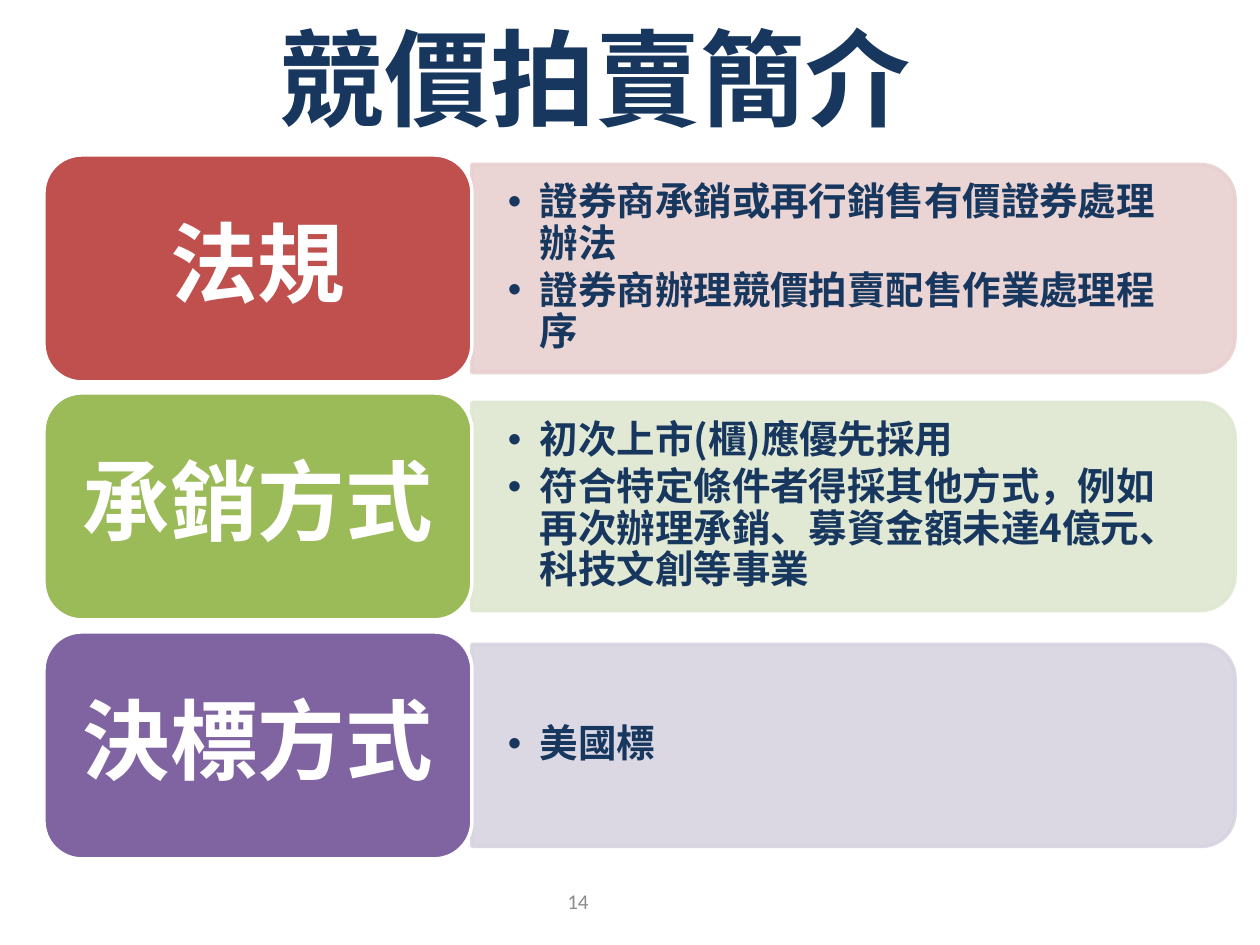
from lxml.etree import SubElement
from pptx import Presentation
from pptx.dml.color import RGBColor
from pptx.enum.shapes import MSO_SHAPE as Shape
from pptx.enum.text import MSO_ANCHOR as Anchor, PP_ALIGN as Align
from pptx.oxml.ns import qn
from pptx.util import Emu, Pt

SCALE = 914400 / 126
FONT = "Noto Sans CJK SC"
COLORS = {
    "navy": "17375E", "white": "FFFFFF", "gray": "8C8C8C",
    "red": "C0504D", "pale_red": "E8D0D0",
    "green": "9BBB59", "pale_green": "DEE7D1",
    "purple": "8064A2", "pale_purple": "D8D3E0",
}
ROWS = [
    ("法規", "red", 208, ["證券商承銷或再行銷售有價證券處理辦法", "證券商辦理競價拍賣配售作業處理程序"]),
    ("承銷方式", "green", 208, ["初次上市(櫃)應優先採用", "符合特定條件者得採其他方式，例如再次辦理承銷、募資金額未達4億元、科技文創等事業"]),
    ("決標方式", "purple", 202, ["美國標"]),
]


def px(length):
    """Turn px into EMU."""
    return Emu(round(length * SCALE))


def box(left, top, width, height):
    """Return a box given in px as EMU lengths."""
    return [px(length) for length in (left, top, width, height)]


def color(name):
    """Look up a named colour."""
    return RGBColor.from_string(COLORS[name])


def format_runs(paragraph, size, color_name, font=FONT, bold=True):
    """Format every run of a paragraph for Latin and East Asian text."""
    for run in paragraph.runs:
        run.font.size = Pt(size)
        run.font.bold = bold
        run.font.color.rgb = color(color_name)
        run.font.name = font
        SubElement(run.font._element, qn("a:ea"), typeface=font)


def set_frame(text_frame, side=0, end=0):
    """Wrap and centre a text frame vertically with the given insets."""
    text_frame.word_wrap = True
    text_frame.vertical_anchor = Anchor.MIDDLE
    text_frame.margin_left = text_frame.margin_right = px(side)
    text_frame.margin_top = text_frame.margin_bottom = px(end)


def paint(shape, fill_name, line_name, alpha=None):
    """Give a shape a flat fill and outline, optionally see-through."""
    shape.shadow.inherit = False
    shape.fill.solid()
    shape.fill.fore_color.rgb = color(fill_name)
    shape.line.color.rgb = color(line_name)
    shape.line.width = Pt(2)
    if alpha:
        for rgb in shape._element.spPr.iter(qn("a:srgbClr")):
            SubElement(rgb, qn("a:alpha"), val=str(alpha * 1000))


def add_bullets(slide, left, top, width, height, items):
    """Place the bulleted text of one row."""
    text_frame = slide.shapes.add_textbox(*box(left, top, width, height)).text_frame
    set_frame(text_frame, 34, 18)
    text_frame.text = "\n".join(items)
    for paragraph in text_frame.paragraphs:
        paragraph.line_spacing = 0.9
        paragraph.space_after = Pt(3)
        properties = paragraph._p.get_or_add_pPr()
        properties.set("marL", str(px(32)))
        properties.set("indent", str(-px(32)))
        SubElement(properties, qn("a:buFont"), typeface="Arial")
        SubElement(properties, qn("a:buChar"), char="•")
        format_runs(paragraph, 22, "navy")


def add_row(slide, left, top, width, height, row):
    """Place one row: a pale panel with bullets and a coloured heading."""
    heading, color_name, panel_height, items = row
    heading_width = 428
    panel_left = left + heading_width
    panel_width = width - heading_width
    middle = top + height / 2
    panel = slide.shapes.add_shape(Shape.ROUND_2_SAME_RECTANGLE, *box(
        panel_left + (panel_width - panel_height) / 2, middle - panel_width / 2,
        panel_height, panel_width))
    panel.rotation = 90
    paint(panel, f"pale_{color_name}", f"pale_{color_name}", 90)
    text_height = panel_height - 20
    add_bullets(slide, panel_left + 2, middle - text_height / 2, panel_width - 10, text_height, items)

    label = slide.shapes.add_shape(Shape.ROUNDED_RECTANGLE, *box(left, top, heading_width, height))
    paint(label, color_name, "white")
    set_frame(label.text_frame, 24, 13)
    label.text_frame.text = heading
    paragraph = label.text_frame.paragraphs[0]
    paragraph.alignment = Align.CENTER
    paragraph.line_spacing = 0.9
    format_runs(paragraph, 50, "white")


def add_title(slide, left, top, width, height):
    """Fill and place the title placeholder."""
    title = slide.shapes.title
    title.left, title.top, title.width, title.height = box(left, top, width, height)
    set_frame(title.text_frame)
    title.text_frame.text = "競價拍賣簡介"
    paragraph = title.text_frame.paragraphs[0]
    paragraph.alignment = Align.CENTER
    format_runs(paragraph, 60, "navy")


def add_page_number(slide, left, top, width, height):
    """Place the page number at the foot."""
    text_frame = slide.shapes.add_textbox(*box(left, top, width, height)).text_frame
    set_frame(text_frame)
    text_frame.text = "14"
    paragraph = text_frame.paragraphs[0]
    paragraph.alignment = Align.CENTER
    format_runs(paragraph, 12, "gray", "Calibri", False)


def main():
    """Build and save the slide."""
    presentation = Presentation()
    presentation.slide_width, presentation.slide_height = px(1260), px(945)
    slide = presentation.slides.add_slide(presentation.slide_layouts[5])
    add_page_number(slide, 431, 876, 294, 50)
    add_title(slide, 213, 26, 764, 100)
    for index, row in enumerate(ROWS):
        add_row(slide, 44, 155 + index * 477 // 2, 1191, 227, row)
    presentation.save("out.pptx")


if __name__ == "__main__":
    main()
